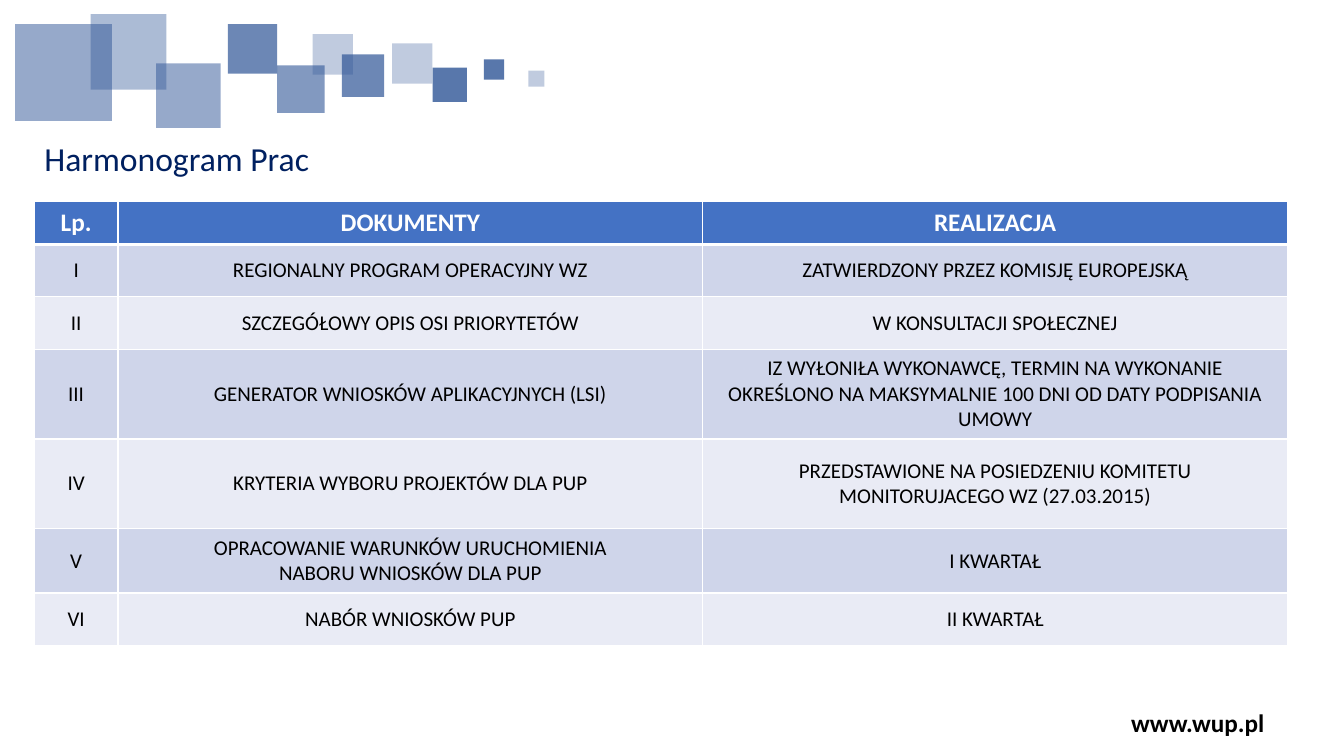
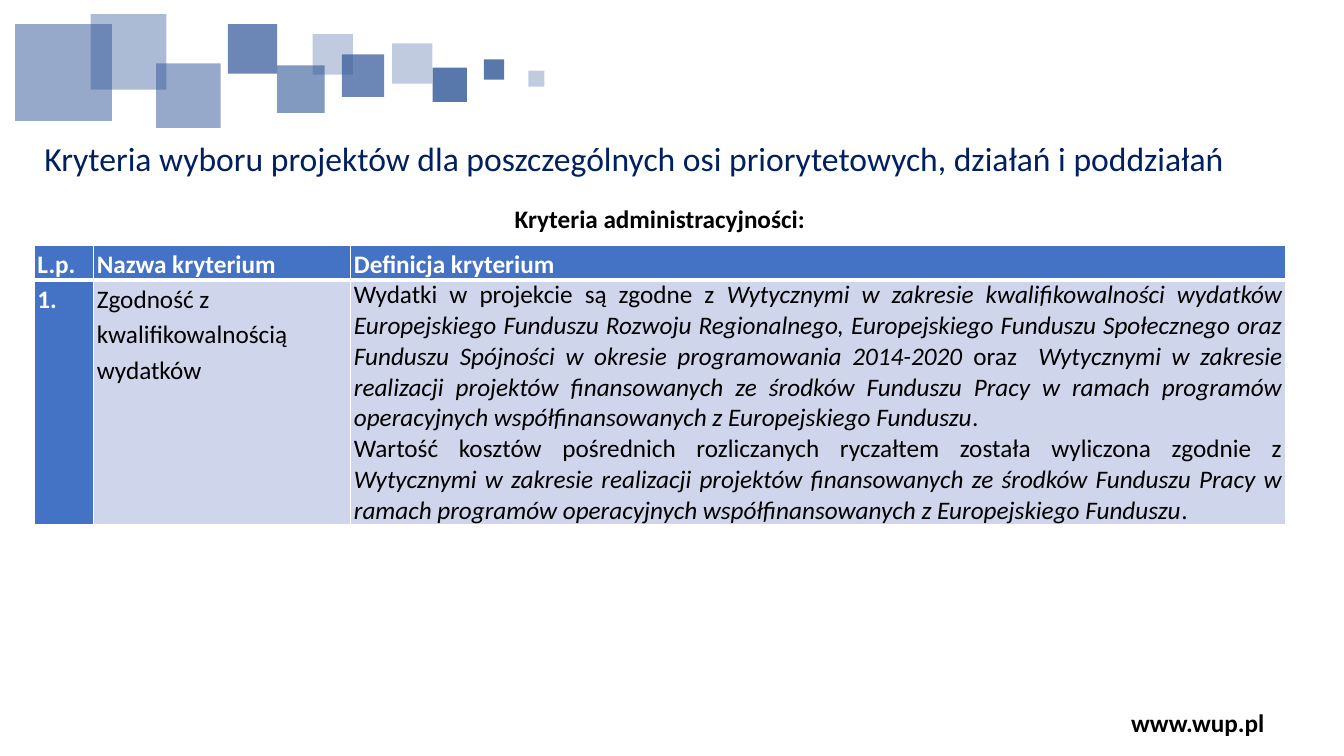
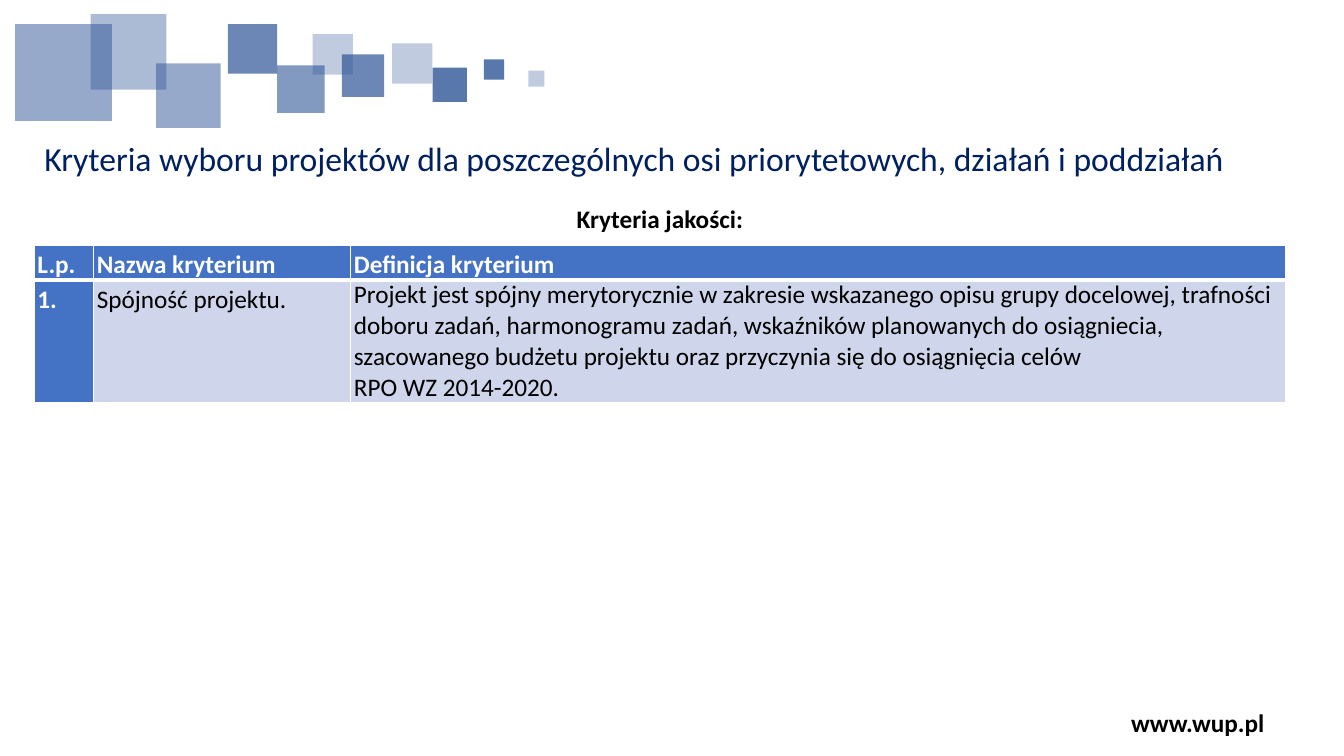
from dataclasses import dataclass
from lxml.etree import SubElement
from pptx import Presentation
from pptx.dml.color import RGBColor
from pptx.enum.shapes import MSO_SHAPE
from pptx.enum.text import MSO_ANCHOR, MSO_AUTO_SIZE, PP_ALIGN
from pptx.oxml.ns import qn
from pptx.util import Pt


@dataclass(frozen=True)
class Theme:
    font: str = "Calibri"
    title: str = "002060"
    square: str = "2F5597"
    head: str = "4472C4"
    odd: str = "CFD5EA"
    even: str = "E9EBF5"
    ink: str = "000000"
    paper: str = "FFFFFF"
    title_pt: int = 24
    text_pt: int = 18
    small_pt: int = 15


T = Theme()
PX = 9144
SLIDE = (1333, 750)
TITLE_BOX = (34, 136, 1241, 55)
SUBTITLE_BOX = (34, 200, 1241, 40)
FOOTER_BOX = (1048, 697, 280, 40)
FOOTER = "www.wup.pl"

SQUARES = [
    (389, 43, 40, 30), (429, 67, 34, 80), (339, 54, 42, 70), (15, 24, 96, 50),
    (275, 65, 47, 60), (155, 63, 64, 50), (90, 14, 75, 40), (480, 59, 20, 80),
    (226, 24, 49, 70), (310, 34, 40, 30), (524, 70, 16, 30),
]

SCHEDULE_TITLE = "Harmonogram Prac"
SCHEDULE_COLS = (83, 580, 580)
SCHEDULE_HEIGHTS = (42, 52, 52, 89, 89, 64, 52)
SCHEDULE = [
    ("Lp.", "DOKUMENTY", "REALIZACJA"),
    ("I", "REGIONALNY PROGRAM OPERACYJNY WZ", "ZATWIERDZONY PRZEZ KOMISJĘ EUROPEJSKĄ"),
    ("II", "SZCZEGÓŁOWY OPIS OSI PRIORYTETÓW", "W KONSULTACJI SPOŁECZNEJ"),
    ("III", "GENERATOR WNIOSKÓW APLIKACYJNYCH (LSI)",
     "IZ WYŁONIŁA WYKONAWCĘ, TERMIN NA WYKONANIE OKREŚLONO NA MAKSYMALNIE 100 DNI "
     "OD DATY PODPISANIA UMOWY"),
    ("IV", "KRYTERIA WYBORU PROJEKTÓW DLA PUP",
     "PRZEDSTAWIONE NA POSIEDZENIU KOMITETU MONITORUJACEGO WZ (27.03.2015)"),
    ("V", "OPRACOWANIE WARUNKÓW URUCHOMIENIA\nNABORU WNIOSKÓW DLA PUP", "I KWARTAŁ"),
    ("VI", "NABÓR WNIOSKÓW PUP", "II KWARTAŁ"),
]

CRITERIA_TITLE = ("Kryteria wyboru projektów dla poszczególnych osi priorytetowych, "
                  "działań i poddziałań")
CRITERIA_COLS = (59, 255, 927)
CRITERIA_HEAD = ("L.p.", "Nazwa kryterium", "Definicja kryterium")
CRITERIA = [
    {
        "subtitle": "Kryteria administracyjności:",
        "name": "Zgodność z kwalifikowalnością wydatków",
        "align": PP_ALIGN.JUSTIFY,
        "height": 243,
        "definition": [
            [("Wydatki w projekcie są zgodne z ", False),
             ("Wytycznymi w zakresie kwalifikowalności wydatków Europejskiego Funduszu "
              "Rozwoju Regionalnego, Europejskiego Funduszu Społecznego oraz Funduszu "
              "Spójności w okresie programowania 2014-2020 ", True),
             ("oraz  ", False),
             ("Wytycznymi w zakresie realizacji projektów finansowanych ze środków "
              "Funduszu Pracy w ramach programów operacyjnych współfinansowanych "
              "z Europejskiego Funduszu", True),
             (".", False)],
            [("Wartość kosztów pośrednich rozliczanych ryczałtem została wyliczona "
              "zgodnie z ", False),
             ("Wytycznymi w zakresie realizacji projektów finansowanych ze środków "
              "Funduszu Pracy w ramach programów operacyjnych współfinansowanych "
              "z Europejskiego Funduszu", True),
             (".", False)],
        ],
    },
    {
        "subtitle": "Kryteria jakości:",
        "name": "Spójność projektu.",
        "align": PP_ALIGN.LEFT,
        "height": 122,
        "definition": [
            [("Projekt jest spójny merytorycznie w zakresie wskazanego opisu grupy "
              "docelowej, trafności doboru zadań, harmonogramu zadań, wskaźników "
              "planowanych do osiągniecia, szacowanego budżetu projektu oraz przyczynia "
              "się do osiągnięcia celów\nRPO WZ 2014-2020.", False)],
        ],
    },
]

CENTER = {"alignment": PP_ALIGN.CENTER}
TIGHT = {"line_spacing": 0.9}
LOOSE = {"line_spacing": 1.15, "space_before": Pt(2), "space_after": Pt(2)}


def px(*values):
    return [v * PX for v in values]


def apply(obj, values):
    for name, value in values.items():
        setattr(obj, name, value)


def write(tf, text, size, color, bold=False, para=None):
    paragraphs = [[(text, False)]] if isinstance(text, str) else text
    for i, runs in enumerate(paragraphs):
        p = tf.add_paragraph() if i else tf.paragraphs[0]
        apply(p, para or {})
        for content, italic in runs:
            for j, line in enumerate(content.split("\n")):
                if j:
                    p.add_line_break()
                r = p.add_run()
                r.text = line
                apply(r.font, {"name": T.font, "size": Pt(size), "bold": bold, "italic": italic})
                r.font.color.rgb = RGBColor.from_string(color)


def add_text(s, box, text, anchor, para):
    tf = s.shapes.add_textbox(*px(*box)).text_frame
    apply(tf, {"word_wrap": True, "vertical_anchor": anchor})
    write(tf, text, T.text_pt, T.ink, True, para)


def add_shared(s):
    add_text(s, FOOTER_BOX, FOOTER, MSO_ANCHOR.MIDDLE, CENTER)
    band = s.shapes.add_group_shape()
    for x, y, side, opacity in SQUARES:
        sp = band.shapes.add_shape(MSO_SHAPE.RECTANGLE, *px(x, y, side, side))
        sp.shadow.inherit = False
        sp.fill.solid()
        sp.fill.fore_color.rgb = RGBColor.from_string(T.square)
        sp.line.fill.background()
        color = sp._element.spPr.find(".//" + qn("a:srgbClr"))
        SubElement(color, qn("a:alpha"), val=str(opacity * 1000))


def share_on_layout(prs, layout):
    s = prs.slides.add_slide(layout)
    add_shared(s)
    for sp in list(s.shapes):
        if not sp.is_placeholder:
            layout.shapes._spTree.append(sp._element)
    return s


def set_title(s, text):
    title = s.shapes.title
    apply(title, dict(zip(("left", "top", "width", "height"), px(*TITLE_BOX))))
    tf = title.text_frame
    apply(tf, {"word_wrap": True, "auto_size": MSO_AUTO_SIZE.NONE,
               "vertical_anchor": MSO_ANCHOR.TOP})
    write(tf, text, T.title_pt, T.title, para={"alignment": PP_ALIGN.LEFT, **TIGHT})


def set_borders(cell, top, bottom):
    tcPr = cell._tc.get_or_add_tcPr()
    for i, (side, width) in enumerate((("L", 1), ("R", 1), ("T", top), ("B", bottom))):
        ln = SubElement(tcPr, qn("a:ln" + side), w=str(Pt(width)))
        fill = SubElement(ln, qn("a:solidFill"))
        SubElement(fill, qn("a:srgbClr"), val=T.paper)
        tcPr.insert(i, ln)


def add_grid(s, top, cols, heights, inset):
    frame = s.shapes.add_table(len(heights), len(cols),
                               *px(TITLE_BOX[0], top, sum(cols), sum(heights)))
    table = frame.table
    table.horz_banding = False
    for col, width in zip(table.columns, cols):
        col.width = width * PX
    for row, height in zip(table.rows, heights):
        row.height = height * PX
    margins = dict(zip(("margin_left", "margin_top", "margin_right", "margin_bottom"),
                       px(*inset, *inset)))
    for cell in table.iter_cells():
        apply(cell, margins)
    return table


def fill_cell(table, row, col, text, fill, size, color, bold, para, anchor=MSO_ANCHOR.TOP):
    cell = table.cell(row, col)
    cell.vertical_anchor = anchor
    cell.fill.solid()
    cell.fill.fore_color.rgb = RGBColor.from_string(fill)
    set_borders(cell, 3 if row == 1 else 1, 3 if row == 0 else 1)
    write(cell.text_frame, text, size, color, bold, para)


def add_schedule(s):
    set_title(s, SCHEDULE_TITLE)
    table = add_grid(s, 200, SCHEDULE_COLS, SCHEDULE_HEIGHTS, (13, 6))
    for i, row in enumerate(SCHEDULE):
        if i == 0:
            style = (T.head, T.text_pt, T.paper, True, CENTER)
        else:
            style = (T.odd if i % 2 else T.even, T.small_pt, T.ink, False, CENTER,
                     MSO_ANCHOR.MIDDLE)
        for j, text in enumerate(row):
            fill_cell(table, i, j, text, *style)


def add_criterion(s, item):
    set_title(s, CRITERIA_TITLE)
    add_text(s, SUBTITLE_BOX, item["subtitle"], MSO_ANCHOR.TOP, {**CENTER, **TIGHT})
    table = add_grid(s, 243, CRITERIA_COLS, (34, item["height"]), (3, 0))
    head = (T.head, T.text_pt, T.paper, True, LOOSE)
    body = (T.odd, T.text_pt, T.ink, False)
    for j, text in enumerate(CRITERIA_HEAD):
        fill_cell(table, 0, j, text, *head)
    fill_cell(table, 1, 0, "1.", *head)
    fill_cell(table, 1, 1, item["name"], *body, LOOSE)
    fill_cell(table, 1, 2, item["definition"], *body, {"alignment": item["align"]})


def main():
    prs = Presentation()
    prs.slide_width, prs.slide_height = px(*SLIDE)
    layout = prs.slide_layouts[5]
    add_schedule(share_on_layout(prs, layout))
    for item in CRITERIA:
        add_criterion(prs.slides.add_slide(layout), item)
    prs.save("out.pptx")


if __name__ == "__main__":
    main()
